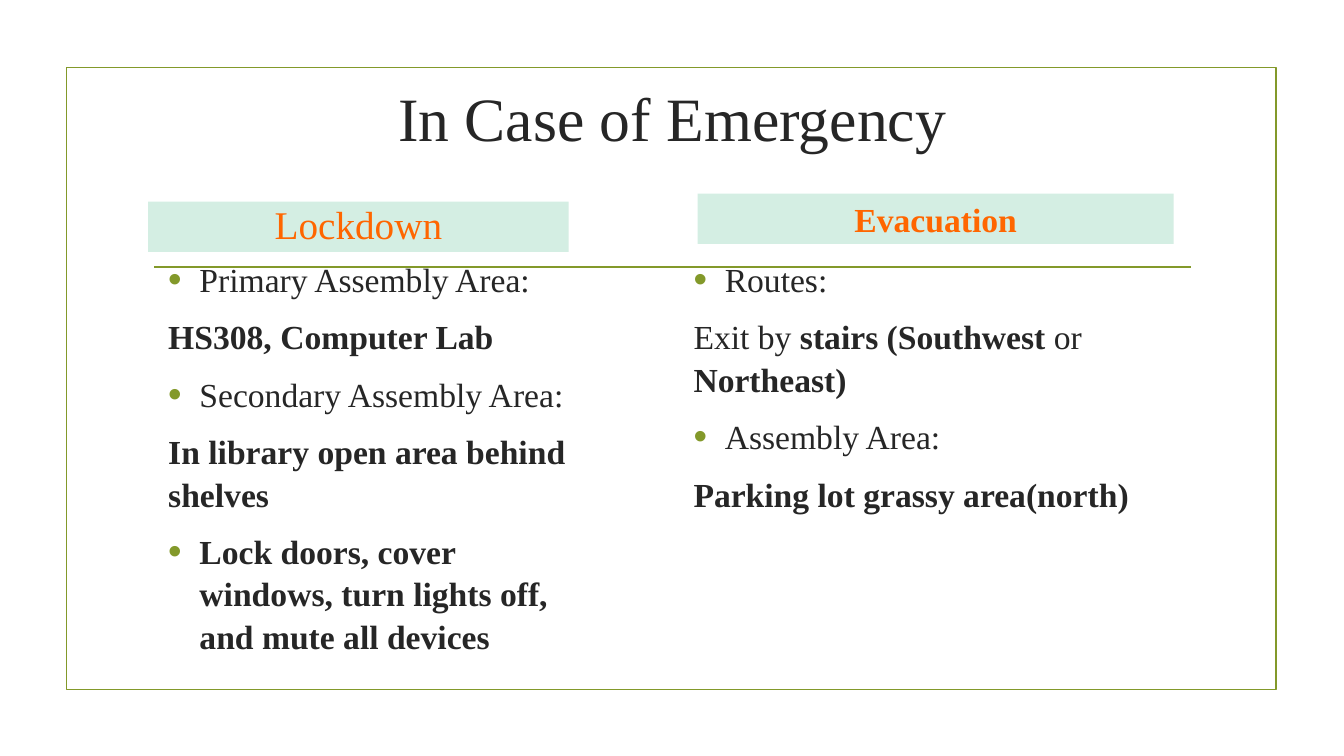
from dataclasses import dataclass

from lxml import etree
from pptx import Presentation
from pptx.dml.color import RGBColor
from pptx.enum.shapes import MSO_CONNECTOR, MSO_SHAPE
from pptx.enum.text import MSO_ANCHOR, PP_ALIGN
from pptx.oxml.ns import qn
from pptx.util import Inches, Pt

RECTANGLE = MSO_SHAPE.RECTANGLE
STRAIGHT = MSO_CONNECTOR.STRAIGHT
TOP, MIDDLE, BOTTOM = MSO_ANCHOR.TOP, MSO_ANCHOR.MIDDLE, MSO_ANCHOR.BOTTOM
LEFT, CENTER = PP_ALIGN.LEFT, PP_ALIGN.CENTER


@dataclass(frozen=True)
class Theme:
    """Colours, type sizes and spacing of the slide."""
    font: str = "Times New Roman"
    ink: str = "262626"
    olive: str = "83992A"
    mint: str = "D4EEE3"
    orange: str = "FF6600"
    title: int = 44
    lockdown: int = 28
    body: int = 24
    rule: float = 1.25
    leading: float = 1.05
    before: float = 4.8
    after: float = 6
    indent: float = 0.31


THEME = Theme()

LOCKDOWN = [
    (True, [("Primary Assembly Area:", False)]),
    (False, [("HS308, Computer Lab", True)]),
    (True, [("Secondary Assembly Area:", False)]),
    (False, [("In library open area behind shelves", True)]),
    (True, [("Lock doors, cover windows, turn lights off, and mute all devices", True)]),
]
EVACUATION = [
    (True, [("Routes:", False)]),
    (False, [("Exit by ", False), ("stairs (Southwest ", True),
             ("or ", False), ("Northeast)", True)]),
    (True, [("Assembly Area:", False)]),
    (False, [("Parking lot grassy area(north)", True)]),
]


def rgb(colour):
    """Turn a hex string into a colour."""
    return RGBColor.from_string(colour)


def add_bullet(paragraph):
    """Give a paragraph a hanging olive bullet."""
    properties = paragraph._p.get_or_add_pPr()
    properties.set("marL", str(Inches(THEME.indent)))
    properties.set("indent", str(-Inches(THEME.indent)))
    colour = etree.SubElement(properties, qn("a:buClr"))
    etree.SubElement(colour, qn("a:srgbClr"), val=THEME.olive)
    etree.SubElement(properties, qn("a:buSzPct"), val="115000")
    etree.SubElement(properties, qn("a:buFont"), typeface="Arial")
    etree.SubElement(properties, qn("a:buChar"), char="•")


def write(frame, paragraphs, size, colour, align=LEFT, anchor=TOP):
    """Fill a text frame with paragraphs of (bulleted, runs)."""
    frame.word_wrap = True
    frame.vertical_anchor = anchor
    for index, (bulleted, runs) in enumerate(paragraphs):
        paragraph = frame.add_paragraph() if index else frame.paragraphs[0]
        layout = {"alignment": align, "line_spacing": THEME.leading,
                  "space_before": Pt(THEME.before if index else 0),
                  "space_after": Pt(THEME.after)}
        for name, value in layout.items():
            setattr(paragraph, name, value)
        if bulleted:
            add_bullet(paragraph)
        for text, bold in runs:
            run = paragraph.add_run()
            run.text = text
            for name, value in {"name": THEME.font, "size": Pt(size), "bold": bold}.items():
                setattr(run.font, name, value)
            run.font.color.rgb = rgb(colour)


def add_border(slide, box):
    """Draw the olive border and the rule across it."""
    left, top, width, height = box
    border = slide.shapes.add_shape(RECTANGLE, *map(Inches, box))
    border.shadow.inherit = False
    border.fill.background()
    rule_y = Inches(top + 1.98)
    rule = slide.shapes.add_connector(
        STRAIGHT, Inches(left + 0.87), rule_y, Inches(left + width - 0.85), rule_y)
    etree.SubElement(rule._element.spPr, qn("a:effectLst"))
    for outlined in (border, rule):
        outlined.line.color.rgb = rgb(THEME.olive)
        outlined.line.width = Pt(THEME.rule)


def add_title(slide, box, text):
    """Place the centred slide title."""
    frame = slide.shapes.add_textbox(*map(Inches, box)).text_frame
    frame.margin_top = Inches(0.15)
    write(frame, [(False, [(text, False)])], THEME.title, THEME.ink, CENTER, MIDDLE)


def add_heading(slide, box, text, size, bold):
    """Place a mint heading band."""
    band = slide.shapes.add_shape(RECTANGLE, *map(Inches, box))
    band.shadow.inherit = False
    band.fill.solid()
    band.fill.fore_color.rgb = rgb(THEME.mint)
    band.line.fill.background()
    write(band.text_frame, [(False, [(text, bold)])], size, THEME.orange, CENTER, BOTTOM)


def add_instructions(slide, box, paragraphs):
    """Place one column of instructions."""
    frame = slide.shapes.add_textbox(*map(Inches, box)).text_frame
    write(frame, paragraphs, THEME.body, THEME.ink)


def main():
    """Build and save the emergency slide."""
    deck = Presentation()
    deck.slide_width, deck.slide_height = Inches(13.33), Inches(7.5)
    slide = deck.slides.add_slide(deck.slide_layouts[6])
    add_border(slide, (0.66, 0.67, 12, 6.17))
    add_title(slide, (1.42, 0.38, 10.5, 1.43), "In Case of Emergency")
    add_heading(slide, (1.47, 2, 4.17, 0.5), "Lockdown", THEME.lockdown, False)
    add_instructions(slide, (1.57, 2.5, 4.42, 4.62), LOCKDOWN)
    add_instructions(slide, (6.78, 2.5, 5.25, 4.7), EVACUATION)
    add_heading(slide, (6.92, 1.92, 4.72, 0.5), "Evacuation", THEME.body, True)
    deck.save("out.pptx")


if __name__ == "__main__":
    main()
